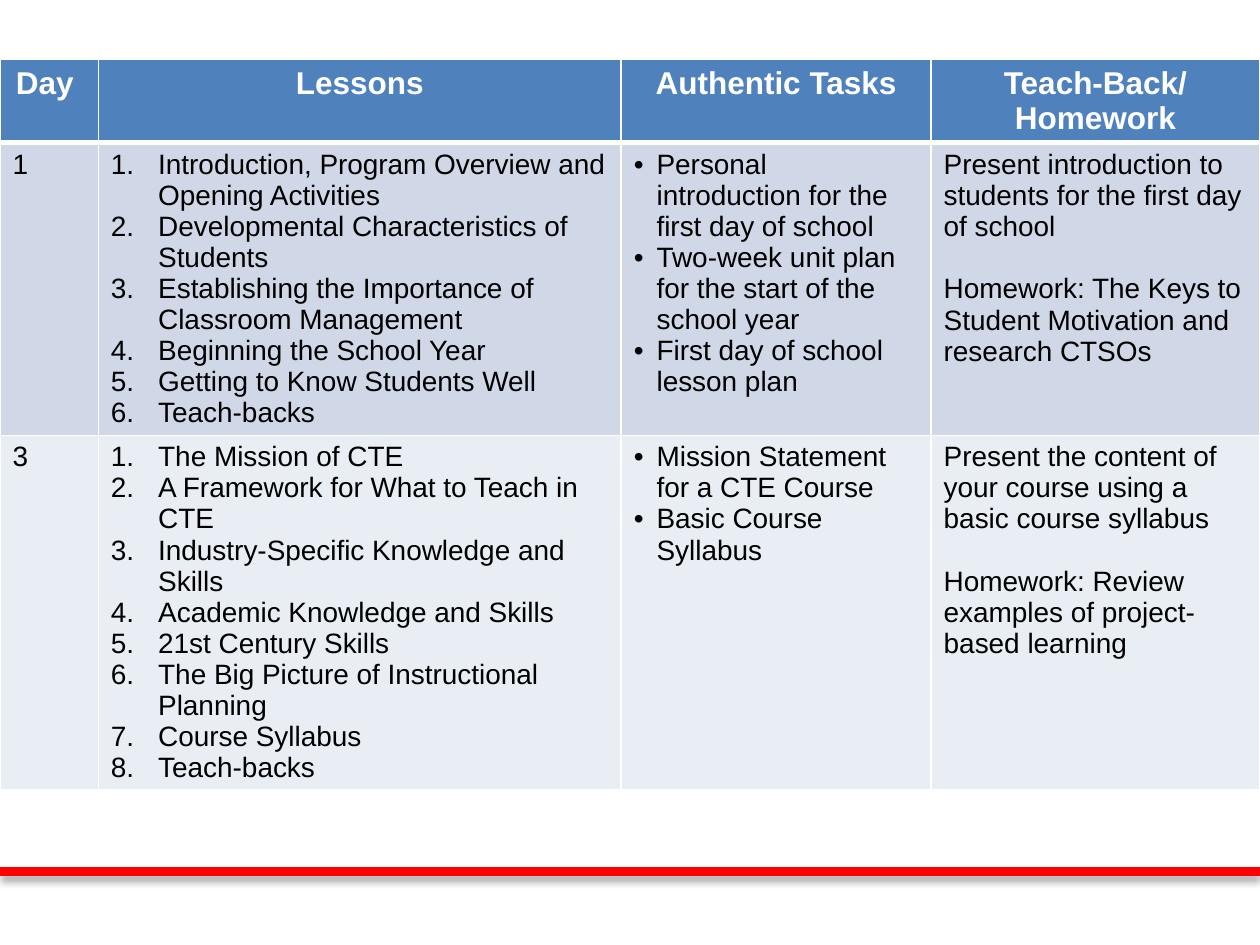
from dataclasses import dataclass

from lxml import etree
from pptx import Presentation
from pptx.dml.color import RGBColor
from pptx.enum import shapes, text
from pptx.oxml import ns
from pptx.util import Pt


@dataclass(frozen=True)
class Theme:
    font: str = "Arial"
    head_size: int = 18
    body_size: int = 16
    white: str = "FFFFFF"
    black: str = "000000"
    rule: str = "FF0000"
    head_fill: str = "4F81BD"
    day_fills: tuple = ("D0D8E8", "E9EDF4")


theme = Theme()


def add_xml(parent, tag, **attributes):
    return etree.SubElement(parent, ns.qn(tag), attributes)


def fill_cell(cell, paragraphs, style, fill, top, bottom):
    # Borders come before the fill in the cell properties
    props = cell._tc.get_or_add_tcPr()
    for side, width in (("L", 1), ("R", 1), ("T", top), ("B", bottom)):
        border = add_xml(props, f"a:ln{side}", w=str(Pt(width)))
        add_xml(add_xml(border, "a:solidFill"), "a:srgbClr", val=theme.white)
    cell.fill.solid()
    cell.fill.fore_color.rgb = RGBColor.from_string(fill)

    for i, words in enumerate(paragraphs):
        para = cell.text_frame.paragraphs[0] if i == 0 else cell.text_frame.add_paragraph()
        if style in list_indents:
            indent = Pt(list_indents[style])
            para_props = para._p.get_or_add_pPr()
            para_props.set("marL", str(indent))
            para_props.set("indent", str(-indent))
            add_xml(para_props, "a:buFont", typeface=theme.font)
            if style == "numbers":
                add_xml(para_props, "a:buAutoNum", type="arabicPeriod")
            else:
                add_xml(para_props, "a:buChar", char="•")
        elif i:
            para.space_before = Pt(18)
        header = style == "header"
        if header:
            para.alignment = text.PP_ALIGN.CENTER
        run = para.add_run()
        run.text = words
        run.font.name = theme.font
        run.font.size = Pt(theme.head_size if header else theme.body_size)
        run.font.bold = header
        run.font.color.rgb = RGBColor.from_string(theme.white if header else theme.black)


# Content
list_indents = {"numbers": 27, "bullets": 13}
headings = ["Day ", "Lessons", "Authentic Tasks", "Teach-Back/Homework"]
column_styles = ["plain", "numbers", "bullets", "plain"]
days = [
    [
        ["1"],
        ["Introduction, Program Overview and Opening Activities",
         "Developmental Characteristics of Students",
         "Establishing the Importance of Classroom Management",
         "Beginning the School Year",
         "Getting to Know Students Well",
         "Teach-backs"],
        ["Personal introduction for the first day of school",
         "Two-week unit plan for the start of the school year",
         "First day of school lesson plan"],
        ["Present introduction to students for the first day of school",
         "Homework: The Keys to Student Motivation and research CTSOs"],
    ],
    [
        ["3"],
        ["The Mission of CTE",
         "A Framework for What to Teach in CTE",
         "Industry-Specific Knowledge and Skills",
         "Academic Knowledge and Skills",
         "21st Century Skills",
         "The Big Picture of Instructional Planning",
         "Course Syllabus",
         "Teach-backs"],
        ["Mission Statement for a CTE Course",
         "Basic Course Syllabus"],
        ["Present the content of your course using a basic course syllabus",
         "Homework: Review examples of project-based learning"],
    ],
]

# Slide
deck = Presentation()
deck.slide_width, deck.slide_height = Pt(720), Pt(540)
slide = deck.slides.add_slide(deck.slide_layouts[6])

# Red rule with a soft shadow below it
rule = slide.shapes.add_connector(
    shapes.MSO_CONNECTOR.STRAIGHT, Pt(0), Pt(498), Pt(720), Pt(498))
rule.line.color.rgb = RGBColor.from_string(theme.rule)
rule.line.width = Pt(5)
effects = add_xml(rule._element.spPr, "a:effectLst")
shadow = add_xml(effects, "a:outerShdw", blurRad=str(Pt(4)), dist=str(Pt(3)),
                 dir="5400000", rotWithShape="0")
shadow_color = add_xml(shadow, "a:srgbClr", val=theme.black)
add_xml(shadow_color, "a:alpha", val="35000")

# Schedule table
column_widths = [56.2, 298.8, 177.1, 187.9]
row_heights = [47, 167, 202]
schedule = slide.shapes.add_table(
    len(row_heights), len(column_widths),
    Pt(0), Pt(34), Pt(sum(column_widths)), Pt(sum(row_heights))).table
for column, width in zip(schedule.columns, column_widths):
    column.width = Pt(width)
for row, height in zip(schedule.rows, row_heights):
    row.height = Pt(height)

# Heading row, with a heavier line under it
for c, heading in enumerate(headings):
    fill_cell(schedule.cell(0, c), [heading], "header", theme.head_fill, 1, 3)

# One row per day
for r, (day, fill) in enumerate(zip(days, theme.day_fills), start=1):
    for c, (paragraphs, style) in enumerate(zip(day, column_styles)):
        fill_cell(schedule.cell(r, c), paragraphs, style, fill, 3 if r == 1 else 1, 1)

deck.save("out.pptx")
